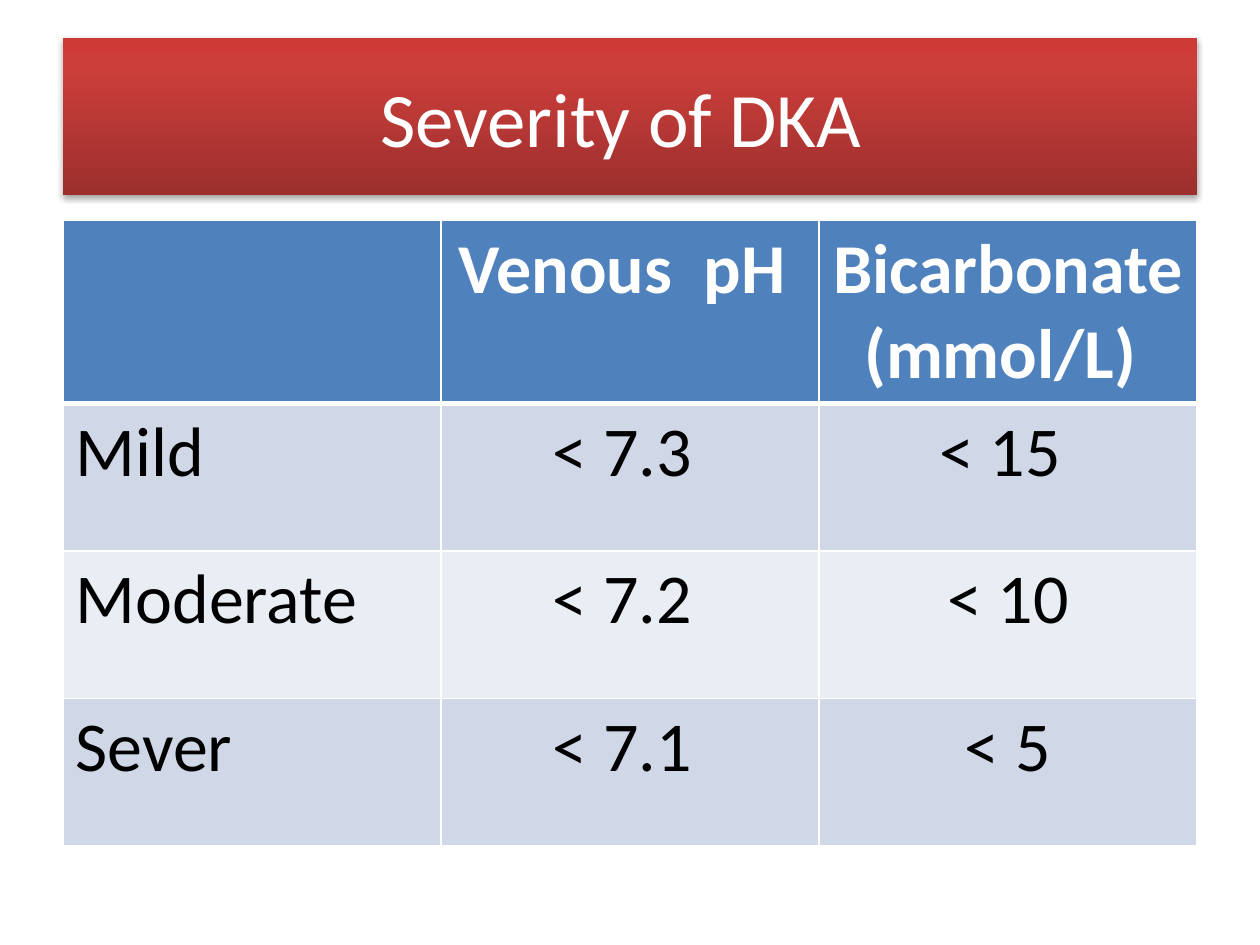
import copy

import lxml.etree
import pptx
import pptx.dml.color
import pptx.enum.shapes
import pptx.enum.text
import pptx.oxml.ns
import pptx.util

TITLE = "Severity of DKA "
ROWS = [
    ("", "Venous  pH ", "Bicarbonate (mmol/L) "),
    ("Mild", "< 7.3 ", "< 15 "),
    ("Moderate", "< 7.2 ", "< 10"),
    ("Sever", "< 7.1 ", "< 5"),
]
FONT = "Calibri"
WHITE, BLACK = "FFFFFF", "000000"
HEADER_FILL, BAND_FILLS = "4F81BD", ("D0D8E8", "E9EDF4")
BANNER_STOPS = [(0, "9C2F2D"), (0.8, "CB3E3A"), (1, "CE3B37")]

WIDTH, HEIGHT = 10, 7.5
MARGIN = WIDTH * 0.05
CONTENT_WIDTH = WIDTH - 2 * MARGIN
BANNER_TOP, BANNER_HEIGHT = HEIGHT * 0.04, 1.25
TABLE_TOP, ROW_HEIGHT = 1.75, 1.17

Inches, Pt = pptx.util.Inches, pptx.util.Pt
CENTER = pptx.enum.text.PP_ALIGN.CENTER
LEFT = pptx.enum.text.PP_ALIGN.LEFT


def rgb(value):
    return pptx.dml.color.RGBColor.from_string(value)


def add_xml(parent, tag, **attributes):
    return lxml.etree.SubElement(parent, pptx.oxml.ns.qn(tag), attributes)


def write(frame, text, size, color, align, bold=False):
    paragraph = frame.paragraphs[0]
    paragraph.alignment = align
    run = paragraph.add_run()
    run.text = text
    run.font.name, run.font.size, run.font.bold = FONT, Pt(size), bold
    run.font.color.rgb = rgb(color)


def fill_gradient(shape, stops):
    """Fill from bottom to top with any number of stops."""
    shape.fill.gradient()
    shape.fill.gradient_angle = 90
    first = shape.fill.gradient_stops
    stop_list = shape._element.spPr.find(".//" + pptx.oxml.ns.qn("a:gsLst"))
    for _ in range(len(stops) - len(first)):
        stop_list.append(copy.deepcopy(stop_list[0]))
    for stop, (position, color) in zip(shape.fill.gradient_stops, stops):
        stop.position = position
        stop.color.rgb = rgb(color)


def add_shadow(shape):
    shape.shadow.inherit = False
    effects = shape._element.spPr.find(pptx.oxml.ns.qn("a:effectLst"))
    shadow = add_xml(effects, "a:outerShdw", blurRad=str(Pt(3.1)), dist=str(Pt(1.8)),
                     dir="5400000", rotWithShape="0")
    color = add_xml(shadow, "a:srgbClr", val=BLACK)
    add_xml(color, "a:alpha", val="35000")


def set_borders(cell, top, bottom):
    properties = cell._tc.get_or_add_tcPr()
    for side, width in (("L", 1), ("R", 1), ("T", top), ("B", bottom)):
        line = add_xml(properties, "a:ln" + side, w=str(Pt(width)))
        add_xml(add_xml(line, "a:solidFill"), "a:srgbClr", val=WHITE)


def add_banner(slide):
    banner = slide.shapes.add_shape(
        pptx.enum.shapes.MSO_SHAPE.RECTANGLE, Inches(MARGIN), Inches(BANNER_TOP),
        Inches(CONTENT_WIDTH), Inches(BANNER_HEIGHT))
    fill_gradient(banner, BANNER_STOPS)
    banner.line.fill.background()
    add_shadow(banner)
    banner.text_frame.vertical_anchor = pptx.enum.text.MSO_ANCHOR.MIDDLE
    write(banner.text_frame, TITLE, 44, WHITE, CENTER)


def add_severity_table(slide):
    table = slide.shapes.add_table(
        len(ROWS), len(ROWS[0]), Inches(MARGIN), Inches(TABLE_TOP),
        Inches(CONTENT_WIDTH), Inches(ROW_HEIGHT * len(ROWS))).table
    for r, texts in enumerate(ROWS):
        header = r == 0
        fill = HEADER_FILL if header else BAND_FILLS[(r - 1) % 2]
        for c, text in enumerate(texts):
            cell = table.cell(r, c)
            set_borders(cell, top=3 if r == 1 else 1, bottom=3 if header else 1)
            cell.fill.solid()
            cell.fill.fore_color.rgb = rgb(fill)
            if text:
                write(cell.text_frame, text, 40, WHITE if header else BLACK,
                      CENTER if c else LEFT, bold=header)


def main():
    deck = pptx.Presentation()
    deck.slide_width, deck.slide_height = Inches(WIDTH), Inches(HEIGHT)
    slide = deck.slides.add_slide(deck.slide_layouts[6])
    add_banner(slide)
    add_severity_table(slide)
    deck.save("out.pptx")


if __name__ == "__main__":
    main()
